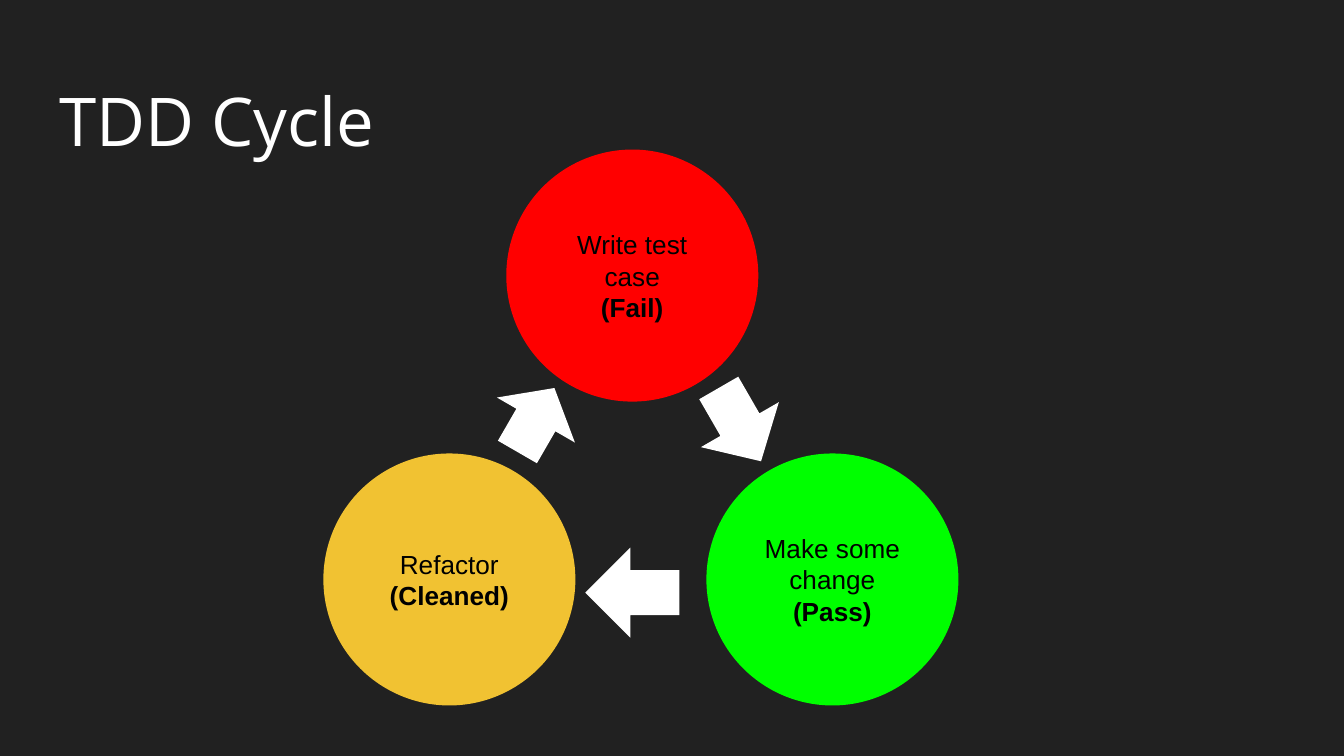
from dataclasses import dataclass

from pptx import Presentation
from pptx.dml.color import RGBColor
from pptx.enum.shapes import MSO_SHAPE
from pptx.enum.text import MSO_ANCHOR, PP_ALIGN
from pptx.util import Inches, Pt

COLORS = {
    "background": "212121",
    "white": "FFFFFF",
    "black": "000000",
    "red": "FF0000",
    "green": "00FF00",
    "yellow": "F1C232",
}

# The slide is a grid of square cells, 100 columns by 56.25 rows (16:9)
CELL = 0.1
COLUMNS, ROWS = 100, 56.25
CIRCLE_SIZE = 18.75
ARROW_HEIGHT = 6.7


@dataclass
class Step:
    column: float
    row: float
    color: str
    action: str
    outcome: str


@dataclass
class Arrow:
    center_column: float
    center_row: float
    length: float
    rotation: int


STEPS = [
    Step(37.67, 11.13, "red", "Write test case", "(Fail)"),
    Step(52.56, 33.74, "green", "Make some change", "(Pass)"),
    Step(24.06, 33.74, "yellow", "Refactor", "(Cleaned)"),
]

ARROWS = [
    Arrow(55.05, 31.6, 6.3, 60),
    Arrow(47.05, 44.1, 7, 180),
    Arrow(39.88, 31.25, 5.5, 300),
]


def cells(count: float) -> int:
    return Inches(count * CELL)


def rgb(name: str) -> RGBColor:
    return RGBColor.from_string(COLORS[name])


def write(paragraph, text: str, *, size: int, color: str, font: str = "Arial",
          bold: bool = False, align=PP_ALIGN.LEFT) -> None:
    paragraph.alignment = align
    run = paragraph.add_run()
    run.text = text
    run.font.name = font
    run.font.size = Pt(size)
    run.font.bold = bold
    run.font.color.rgb = rgb(color)


def prepare_frame(frame, anchor) -> None:
    frame.word_wrap = True
    frame.vertical_anchor = anchor
    frame.margin_left = frame.margin_right = cells(1)
    frame.margin_top = frame.margin_bottom = cells(1)


def add_filled_shape(slide, kind, column: float, row: float, width: float,
                     height: float, color: str):
    shape = slide.shapes.add_shape(
        kind, cells(column), cells(row), cells(width), cells(height))
    shape.shadow.inherit = False
    shape.fill.solid()
    shape.fill.fore_color.rgb = rgb(color)
    shape.line.fill.background()
    return shape


def draw_title(slide, text: str) -> None:
    box = slide.shapes.add_textbox(cells(3.41), cells(4.9), cells(93.2), cells(6.3))
    prepare_frame(box.text_frame, MSO_ANCHOR.TOP)
    write(box.text_frame.paragraphs[0], text, size=36, color="white", font="Open Sans")


def draw_step(slide, step: Step) -> None:
    circle = add_filled_shape(slide, MSO_SHAPE.OVAL, step.column, step.row,
                              CIRCLE_SIZE, CIRCLE_SIZE, step.color)
    frame = circle.text_frame
    prepare_frame(frame, MSO_ANCHOR.MIDDLE)
    label = {"size": 14, "color": "black", "align": PP_ALIGN.CENTER}
    write(frame.paragraphs[0], step.action, **label)
    write(frame.add_paragraph(), step.outcome, bold=True, **label)


def draw_arrow(slide, arrow: Arrow) -> None:
    shape = add_filled_shape(
        slide, MSO_SHAPE.RIGHT_ARROW,
        arrow.center_column - arrow.length / 2,
        arrow.center_row - ARROW_HEIGHT / 2,
        arrow.length, ARROW_HEIGHT, "white")
    shape.rotation = arrow.rotation


def main() -> None:
    presentation = Presentation()
    presentation.slide_width = cells(COLUMNS)
    presentation.slide_height = cells(ROWS)
    slide = presentation.slides.add_slide(presentation.slide_layouts[6])
    slide.background.fill.solid()
    slide.background.fill.fore_color.rgb = rgb("background")

    draw_title(slide, "TDD Cycle")

    # The three steps of the cycle
    for step in STEPS:
        draw_step(slide, step)

    # Clockwise arrows between the steps
    for arrow in ARROWS:
        draw_arrow(slide, arrow)

    presentation.save("out.pptx")


if __name__ == "__main__":
    main()
